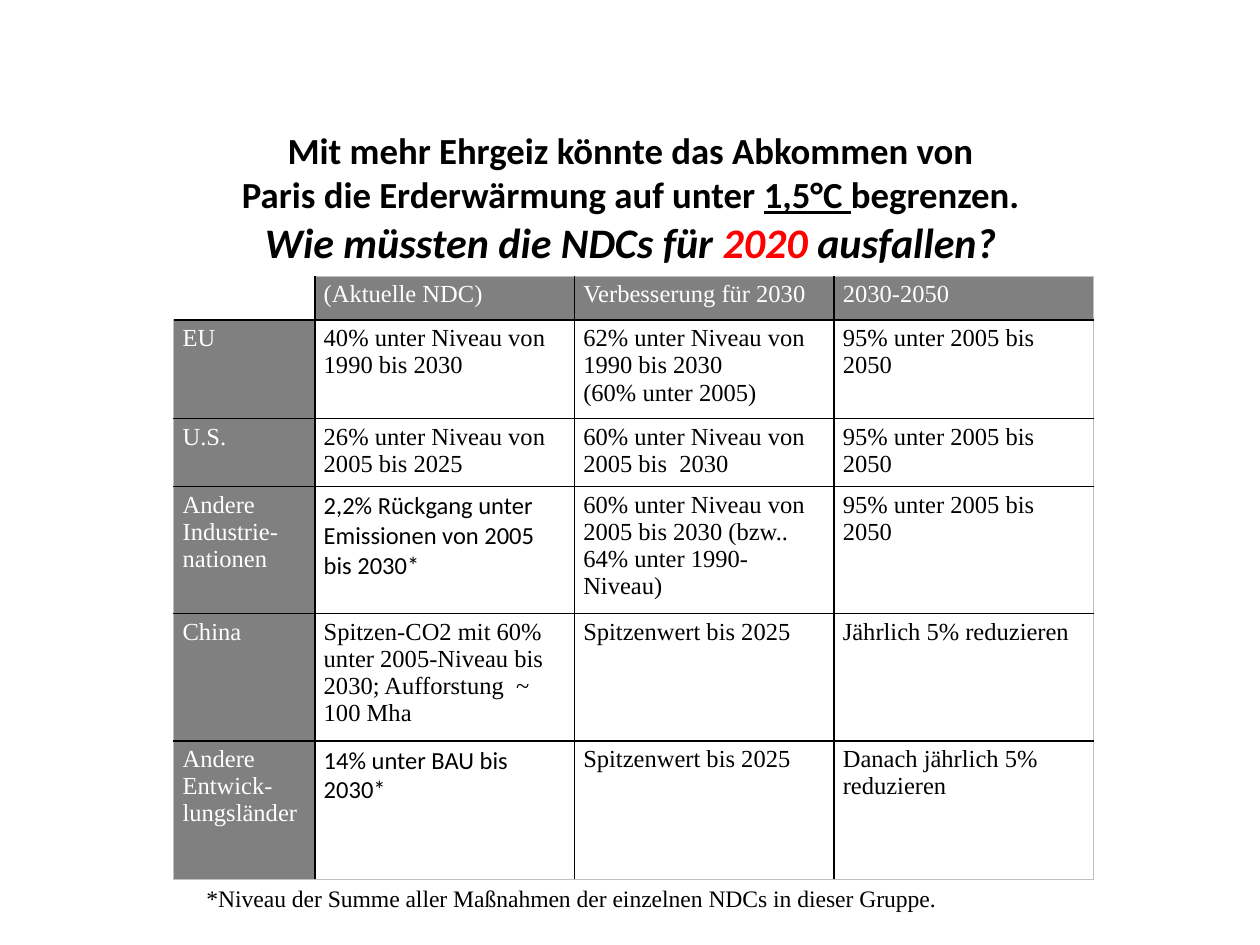
from dataclasses import dataclass
from typing import Optional

from lxml import etree
from pptx import Presentation
from pptx.dml.color import RGBColor
from pptx.enum import text
from pptx.oxml.ns import qn
from pptx.util import Inches, Pt

COLORS = {"black": "000000", "white": "FFFFFF", "gray": "808080",
          "red": "FF0000", "edge": "C0C0C0"}
SERIF, SANS = "Times New Roman", "Calibri"
COL_WIDTHS = [1.12, 2.06, 2.06, 2.06]
ROW_HEIGHTS = [0.35, 0.78, 0.54, 1.01, 1.01, 1.1]
ROWS = [
    ["", "(Aktuelle NDC)", "Verbesserung für 2030", "2030-2050"],
    ["EU", "40% unter Niveau von 1990 bis 2030",
     "62% unter Niveau von 1990 bis 2030\n(60% unter 2005)",
     "95% unter 2005 bis 2050"],
    ["U.S.", "26% unter Niveau von 2005 bis 2025",
     "60% unter Niveau von 2005 bis  2030", "95% unter 2005 bis 2050"],
    ["Andere Industrie-nationen",
     "2,2% Rückgang unter Emissionen von 2005 bis 2030*",
     "60% unter Niveau von 2005 bis 2030 (bzw.. 64% unter 1990-Niveau)",
     "95% unter 2005 bis 2050"],
    ["China",
     "Spitzen-CO2 mit 60% unter 2005-Niveau bis 2030; Aufforstung  ~ 100 Mha",
     "Spitzenwert bis 2025", "Jährlich 5% reduzieren"],
    ["Andere Entwick-lungsländer", "14% unter BAU bis 2030*",
     "Spitzenwert bis 2025", "Danach jährlich 5% reduzieren"],
]


@dataclass
class TitleRun:
    text: str
    size: float = 21
    color: str = "black"
    underline: bool = False
    italic: bool = False
    new_line: bool = False


TITLE = [
    TitleRun("Mit mehr Ehrgeiz könnte das Abkommen von"),
    TitleRun("Paris die Erderwärmung auf unter ", new_line=True),
    TitleRun("1,5°C ", underline=True),
    TitleRun("begrenzen."),
    TitleRun("Wie müssten die NDCs für ", 24, italic=True, new_line=True),
    TitleRun("2020", 24, "red", italic=True),
    TitleRun(" ausfallen?", 24, italic=True),
]


def rgb(name: str) -> RGBColor:
    return RGBColor.from_string(COLORS[name])


def set_font(font, name: str, size: float, color: str) -> None:
    font.name, font.size = name, Pt(size)
    font.color.rgb = rgb(color)


def set_margins(box) -> None:
    box.margin_left = box.margin_right = Inches(0.07)
    box.margin_top = box.margin_bottom = Inches(0.04)


def set_border(cell, side: str, color: Optional[str], width: float) -> None:
    """Add one cell edge; a colour of None hides it."""
    line = etree.SubElement(cell._tc.get_or_add_tcPr(), qn(f"a:ln{side}"),
                            w=str(Pt(width)))
    if color is None:
        etree.SubElement(line, qn("a:noFill"))
    else:
        fill = etree.SubElement(line, qn("a:solidFill"))
        etree.SubElement(fill, qn("a:srgbClr"), val=COLORS[color])


def add_title(slide) -> None:
    sp = slide.shapes.title
    sp.left, sp.top = Inches(1.63), Inches(1.13)
    sp.width, sp.height = Inches(6.75), Inches(0.87)
    tf = sp.text_frame
    tf.word_wrap = True
    tf.auto_size = text.MSO_AUTO_SIZE.NONE
    tf.vertical_anchor = text.MSO_ANCHOR.MIDDLE
    set_margins(tf)
    p = tf.paragraphs[0]
    p.alignment = text.PP_ALIGN.CENTER
    for part in TITLE:
        if part.new_line:
            p.add_line_break()
        r = p.add_run()
        r.text = part.text
        set_font(r.font, SANS, part.size, part.color)
        r.font.bold = True
        r.font.italic, r.font.underline = part.italic, part.underline


def format_cell(cell, row: int, col: int) -> None:
    corner = row == col == 0
    header = (row == 0 or col == 0) and not corner
    cell.text = ROWS[row][col]
    set_margins(cell)
    font_name = SANS if cell.text.endswith("2030*") else SERIF
    for p in cell.text_frame.paragraphs:
        p.font.size = Pt(14)
        for r in p.runs:
            set_font(r.font, font_name, 14, "white" if header else "black")
            r.font.bold = False
    outer = {"L": col == 0, "R": col == len(COL_WIDTHS) - 1,
             "T": row == 0, "B": row == len(ROWS) - 1}
    for side, is_outer in outer.items():
        if is_outer:
            set_border(cell, side, None if corner else "edge", 0.5)
        else:
            set_border(cell, side, "black", 1)
    if header:
        cell.fill.solid()
        cell.fill.fore_color.rgb = rgb("gray")
    else:
        cell.fill.background()


def add_ndc_table(slide) -> None:
    table = slide.shapes.add_table(
        len(ROWS), len(COL_WIDTHS), Inches(1.38), Inches(2.19),
        Inches(sum(COL_WIDTHS)), Inches(sum(ROW_HEIGHTS))).table
    table.first_row = table.horz_banding = False
    for column, width in zip(table.columns, COL_WIDTHS):
        column.width = Inches(width)
    for row, height in enumerate(ROW_HEIGHTS):
        table.rows[row].height = Inches(height)
        for col in range(len(COL_WIDTHS)):
            format_cell(table.cell(row, col), row, col)


def add_footnote(slide) -> None:
    tf = slide.shapes.add_textbox(Inches(1.54), Inches(6.97),
                                  Inches(6.94), Inches(0.33)).text_frame
    tf.word_wrap = True
    tf.text = ("*Niveau der Summe aller Maßnahmen der einzelnen NDCs "
               "in dieser Gruppe.")
    set_font(tf.paragraphs[0].runs[0].font, SERIF, 13.5, "black")


def main() -> None:
    prs = Presentation()
    prs.slide_width, prs.slide_height = Inches(10), Inches(7.5)
    slide = prs.slides.add_slide(prs.slide_layouts[5])
    add_title(slide)
    add_ndc_table(slide)
    add_footnote(slide)
    prs.save("out.pptx")


if __name__ == "__main__":
    main()
